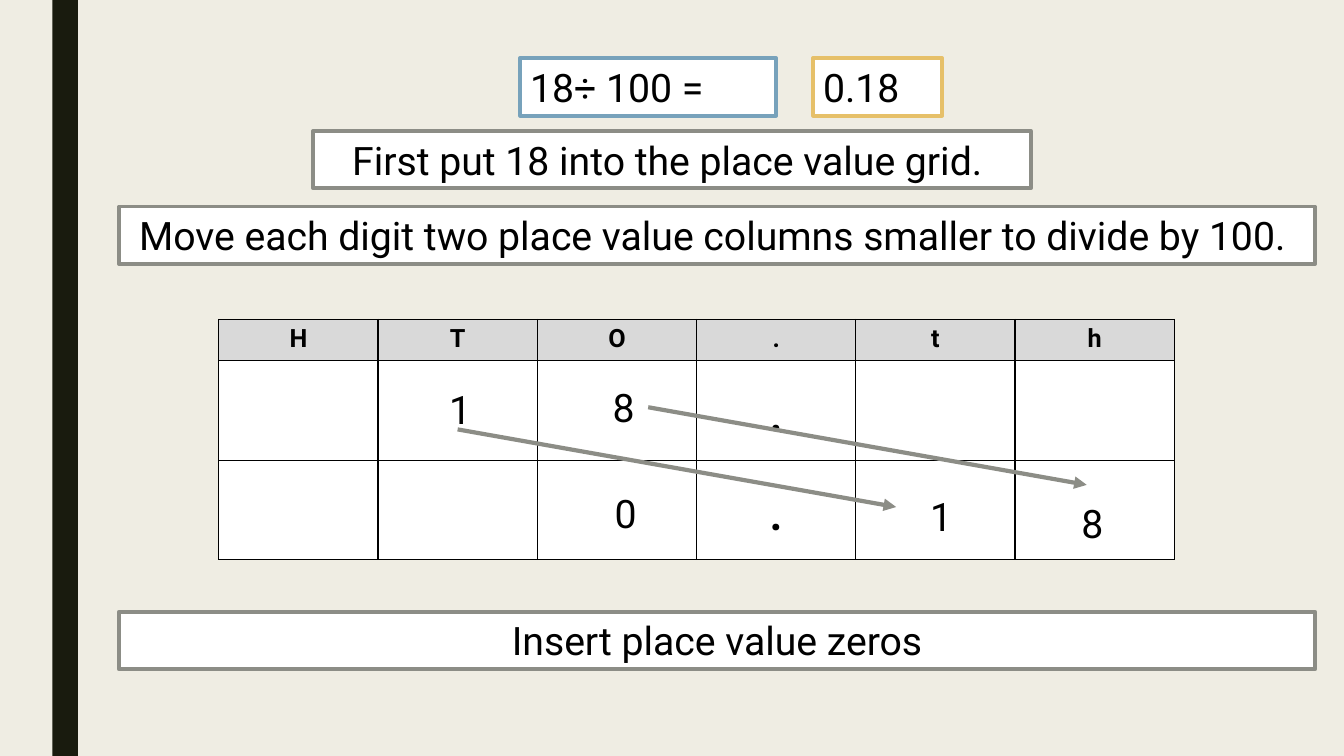
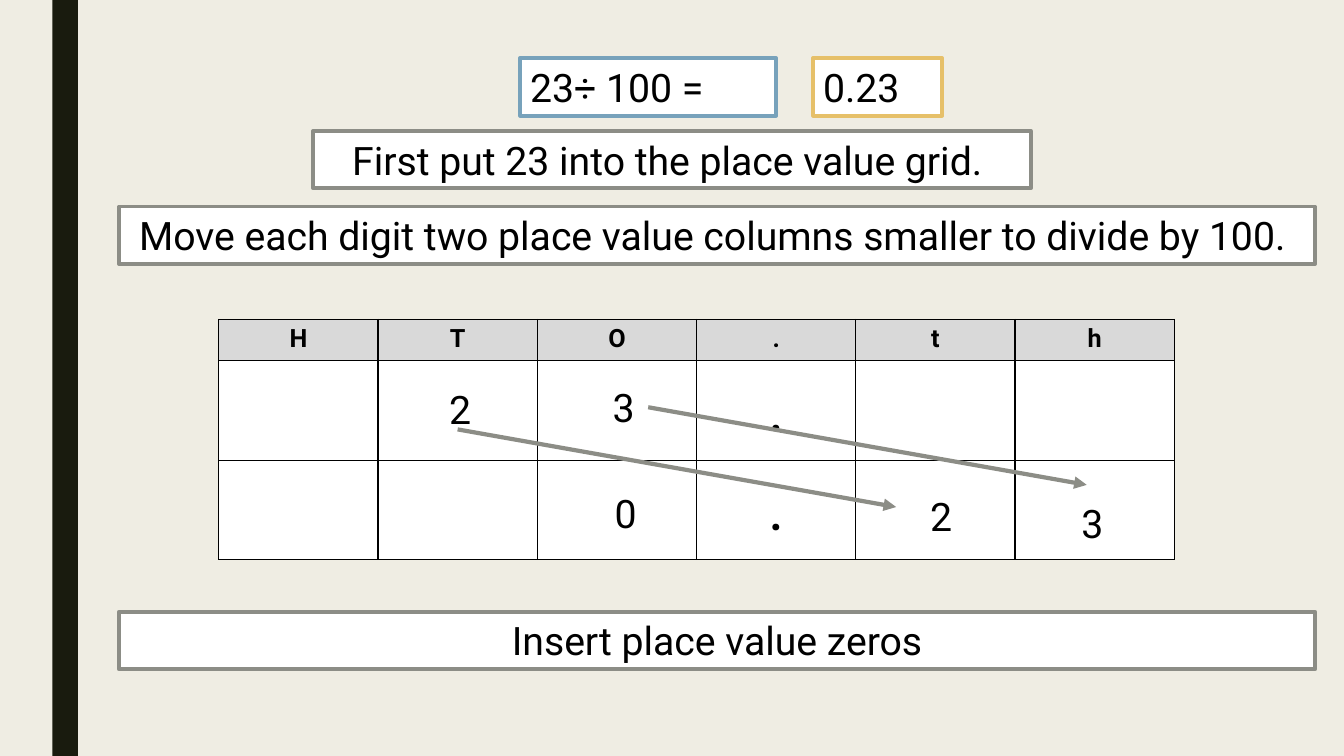
from lxml.etree import SubElement
from pptx import Presentation
from pptx.dml.color import RGBColor
from pptx.enum.shapes import MSO_CONNECTOR, MSO_SHAPE
from pptx.enum.text import MSO_ANCHOR as ANCHOR, MSO_AUTO_SIZE as AUTO, PP_ALIGN as ALIGN
from pptx.oxml.ns import qn
from pptx.util import Inches, Pt

PAPER = RGBColor(0xEF, 0xED, 0xE3)
DARK = RGBColor(0x19, 0x1B, 0x0E)
WHITE = RGBColor(0xFF, 0xFF, 0xFF)
BLACK = RGBColor(0x00, 0x00, 0x00)
SILVER = RGBColor(0xD9, 0xD9, 0xD9)
GREY = RGBColor(0x8C, 0x8D, 0x86)
BLUE = RGBColor(0x77, 0xA2, 0xBB)
GOLD = RGBColor(0xE6, 0xC0, 0x69)

FONT = "Roboto"
BOX_H = 7.6
DIGIT_W = 9.08
WIDE_X, WIDE_W = 8.85, 89
TABLE_X, TABLE_Y, COL_W = 16.28, 42.27, 11.85
ROW_HEIGHTS = (5.4, 13.2, 13.2)
HEADINGS = "HTO.th"
POINT_COL = HEADINGS.index(".")
MOVE_X, MOVE_Y = 32.63, 10.27


class Deck:
    def __init__(self):
        self.prs = Presentation()
        self.prs.slide_width = Inches(13.333)
        self.prs.slide_height = Inches(7.5)
        self.s = None

    def x(self, percent):
        return round(self.prs.slide_width * percent / 100)

    def y(self, percent):
        return round(self.prs.slide_height * percent / 100)

    def area(self, left, top, width, height):
        return self.x(left), self.y(top), self.x(width), self.y(height)

    def slide(self):
        self.s = self.prs.slides.add_slide(self.prs.slide_layouts[6])
        fill = self.s.background.fill
        fill.solid()
        fill.fore_color.rgb = PAPER
        self.rect(3.9, 0, 1.9, 100, DARK)

    def rect(self, left, top, width, height, color, outline=None):
        sp = self.s.shapes.add_shape(MSO_SHAPE.RECTANGLE, *self.area(left, top, width, height))
        sp.shadow.inherit = False
        sp.fill.solid()
        sp.fill.fore_color.rgb = color
        if outline is None:
            sp.line.fill.background()
        else:
            sp.line.color.rgb = outline
            sp.line.width = Pt(2.75)
        return sp

    def label(self, tf, text, align=ALIGN.CENTER, size=28, bold=False):
        p = tf.paragraphs[0]
        p.alignment = align
        r = p.add_run()
        r.text = text
        r.font.name = FONT
        r.font.size = Pt(size)
        r.font.bold = bold
        r.font.color.rgb = BLACK

    def fit(self, sp, text, align=ALIGN.CENTER):
        tf = sp.text_frame
        tf.word_wrap = True
        tf.auto_size = AUTO.SHAPE_TO_FIT_TEXT
        tf.vertical_anchor = ANCHOR.TOP
        self.label(tf, text, align)

    def box(self, left, top, width, text, outline=GREY, align=ALIGN.CENTER):
        self.fit(self.rect(left, top, width, BOX_H, WHITE, outline), text, align)

    def digit(self, left, top, text):
        self.fit(self.s.shapes.add_textbox(*self.area(left, top, DIGIT_W, BOX_H)), text)

    def arrow(self, left, top):
        connector = self.s.shapes.add_connector(
            MSO_CONNECTOR.STRAIGHT, self.x(left), self.y(top),
            self.x(left + MOVE_X), self.y(top + MOVE_Y))
        connector.line.color.rgb = GREY
        connector.line.width = Pt(3)
        props = connector._element.spPr
        SubElement(props.find(qn("a:ln")), qn("a:tailEnd"), type="triangle")
        SubElement(props, qn("a:effectLst"))

    def cell(self, cell, color):
        props = cell._tc.get_or_add_tcPr()
        for side in ("L", "R", "T", "B"):
            ln = SubElement(props, qn("a:ln" + side), w=str(Pt(1)))
            fill = SubElement(ln, qn("a:solidFill"))
            SubElement(fill, qn("a:srgbClr"), val=str(BLACK))
        cell.fill.solid()
        cell.fill.fore_color.rgb = color

    def place_value_grid(self):
        rows, cols = len(ROW_HEIGHTS), len(HEADINGS)
        table = self.s.shapes.add_table(rows, cols, *self.area(
            TABLE_X, TABLE_Y, COL_W * cols, sum(ROW_HEIGHTS))).table
        for col in table.columns:
            col.width = self.x(COL_W)
        for row, height in enumerate(ROW_HEIGHTS):
            table.rows[row].height = self.y(height)
            for col, heading in enumerate(HEADINGS):
                cell = table.cell(row, col)
                self.cell(cell, WHITE if row else SILVER)
                if row == 0:
                    self.label(cell.text_frame, heading, size=18, bold=True)
                elif col == POINT_COL:
                    cell.vertical_anchor = ANCHOR.MIDDLE
                    self.label(cell.text_frame, heading, size=44)


def division_slide(deck, number):
    tens, ones = number
    deck.slide()
    deck.box(38.7, 7.7, 19.05, f"{number}÷ 100 =", BLUE, ALIGN.LEFT)
    deck.box(60.5, 7.7, 9.6, f"0.{number}", GOLD, ALIGN.LEFT)
    deck.box(23.3, 17.33, 53.4, f"First put {number} into the place value grid. ")
    for top, text in (
        (27.33, "Move each digit two place value columns smaller to divide by 100. "),
        (80.93, "Insert place value zeros"),
    ):
        deck.box(WIDE_X, top, WIDE_W, text)
    deck.place_value_grid()
    for left, top, text in (
        (29.7, 50.27, tens),
        (41.85, 50, ones),
        (42, 64.13, "0"),
        (65.48, 64.53, tens),
        (76.73, 65.33, ones),
    ):
        deck.digit(left, top, text)
    for left, top in ((48.23, 53.87), (34.05, 56.8)):
        deck.arrow(left, top)


def main():
    deck = Deck()
    for number in ("18", "23"):
        division_slide(deck, number)
    deck.prs.save("out.pptx")


if __name__ == "__main__":
    main()
